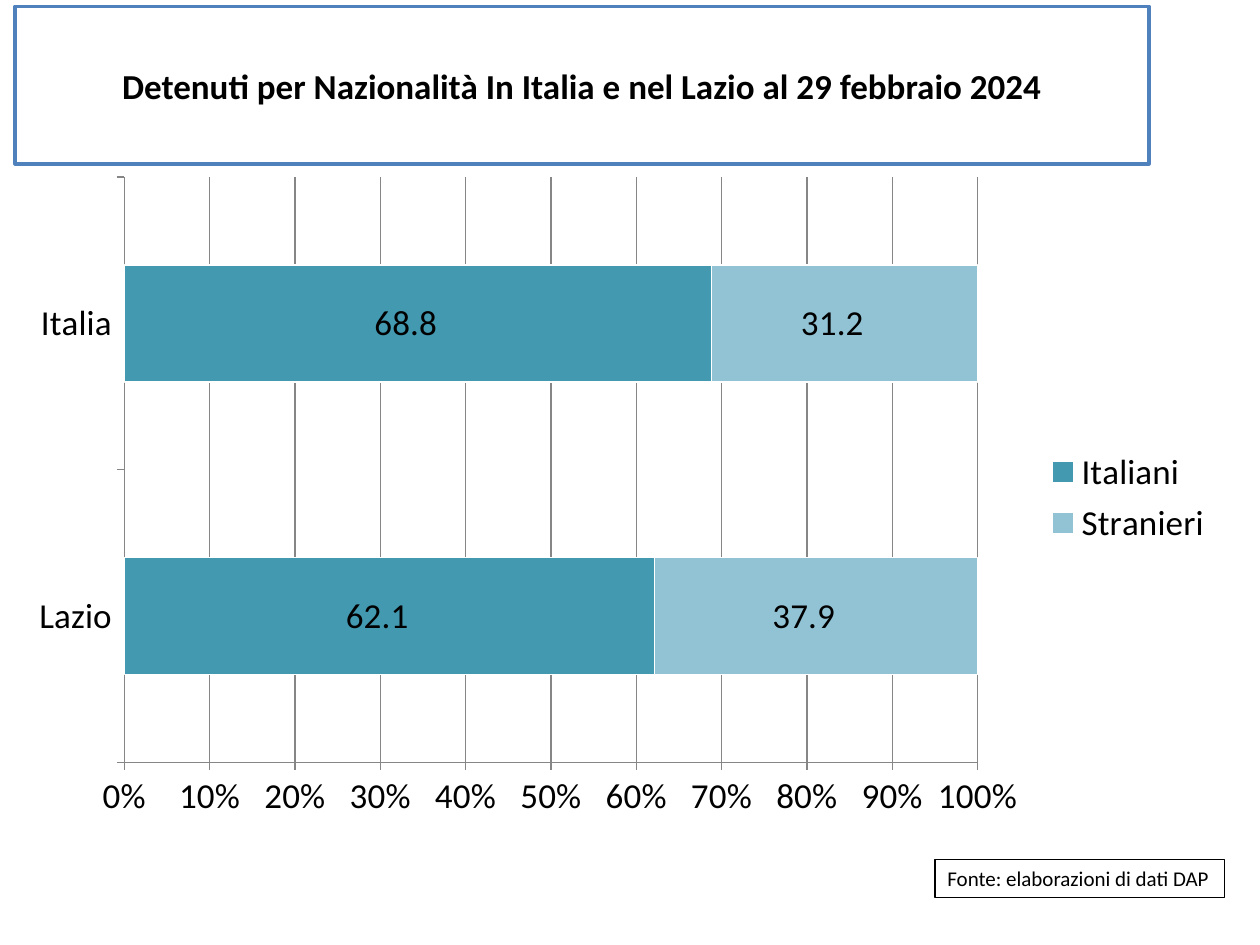
import pptx
import pptx.util
import pptx.chart.data
import pptx.dml.color
import pptx.enum.chart
import pptx.enum.shapes
import pptx.enum.text

Pt = pptx.util.Pt
Chart = pptx.enum.chart
Text = pptx.enum.text

# Content
TITLE = "Detenuti per Nazionalità In Italia e nel Lazio al 29 febbraio 2024"
SOURCE = "Fonte: elaborazioni di dati DAP"
AREAS = ["Lazio", "Italia"]
GROUPS = [("Italiani", (62.1, 68.8), "teal"), ("Stranieri", (37.9, 31.2), "pale")]
COLORS = {"teal": "4299B0", "pale": "92C3D4", "blue": "4F81BD",
          "gray": "868686", "black": "000000", "white": "FFFFFF"}
FONT = "Calibri"


def color(name):
    return pptx.dml.color.RGBColor.from_string(COLORS[name])


def style(font, size, bold=False):
    font.name, font.size, font.bold = FONT, Pt(size), bold
    font.color.rgb = color("black")


def outline(line, name, width):
    line.color.rgb = color(name)
    line.width = Pt(width)


def fill(shape, name):
    shape.fill.solid()
    shape.fill.fore_color.rgb = color(name)


def write(shape, text, size, align, bold=False):
    frame = shape.text_frame
    frame.text = text
    frame.vertical_anchor = Text.MSO_ANCHOR.MIDDLE
    para = frame.paragraphs[0]
    para.alignment = align
    style(para.font, size, bold)
    return frame


deck = pptx.Presentation()
deck.slide_width, deck.slide_height = Pt(720), Pt(540)
slide = deck.slides.add_slide(deck.slide_layouts[5])

# Title
title = slide.shapes.title
title.left, title.top, title.width, title.height = Pt(8.6), Pt(3.6), Pt(648), Pt(90)
fill(title, "white")
outline(title.line, "blue", 2)
write(title, TITLE, 20, Text.PP_ALIGN.CENTER, True)

# Source note
note = slide.shapes.add_shape(pptx.enum.shapes.MSO_SHAPE.RECTANGLE,
                              Pt(534.3), Pt(491), Pt(165.6), Pt(21.8))
note.shadow.inherit = False
fill(note, "white")
outline(note.line, "black", 0.75)
frame = write(note, SOURCE, 12, Text.PP_ALIGN.LEFT)
frame.word_wrap = False
frame.auto_size = Text.MSO_AUTO_SIZE.SHAPE_TO_FIT_TEXT

# Chart
data = pptx.chart.data.CategoryChartData()
data.categories = AREAS
for name, vals, _ in GROUPS:
    data.add_series(name, vals)
chart = slide.shapes.add_chart(Chart.XL_CHART_TYPE.BAR_STACKED_100, Pt(8.6), Pt(93.6),
                               Pt(692), Pt(381.6), data).chart
style(chart.font, 20)
chart.has_title = False
chart.has_legend = True
chart.legend.position = Chart.XL_LEGEND_POSITION.RIGHT
chart.legend.include_in_layout = False

# Bars and labels
plot = chart.plots[0]
plot.gap_width, plot.overlap = 150, 100
plot.vary_by_categories = False
for bar, (_, _, shade) in zip(plot.series, GROUPS):
    fill(bar.format, shade)
    outline(bar.format.line, "white", 0.75)
    labels = bar.data_labels
    labels.show_value = True
    labels.position = Chart.XL_LABEL_POSITION.CENTER
    labels.number_format = r"_-* #,##0.0\ _€_-"
    labels.number_format_is_linked = False
    style(labels.font, 20)

# Axes
for axis in (chart.category_axis, chart.value_axis):
    axis.major_tick_mark = Chart.XL_TICK_MARK.OUTSIDE
    axis.minor_tick_mark = Chart.XL_TICK_MARK.NONE
    outline(axis.format.line, "gray", 0.75)
    style(axis.tick_labels.font, 20)
scale = chart.value_axis
scale.minimum_scale, scale.maximum_scale, scale.major_unit = 0, 1, 0.1
scale.has_major_gridlines = True
outline(scale.major_gridlines.format.line, "gray", 0.75)
scale.tick_labels.number_format = "0%"
scale.tick_labels.number_format_is_linked = False

deck.save("out.pptx")
